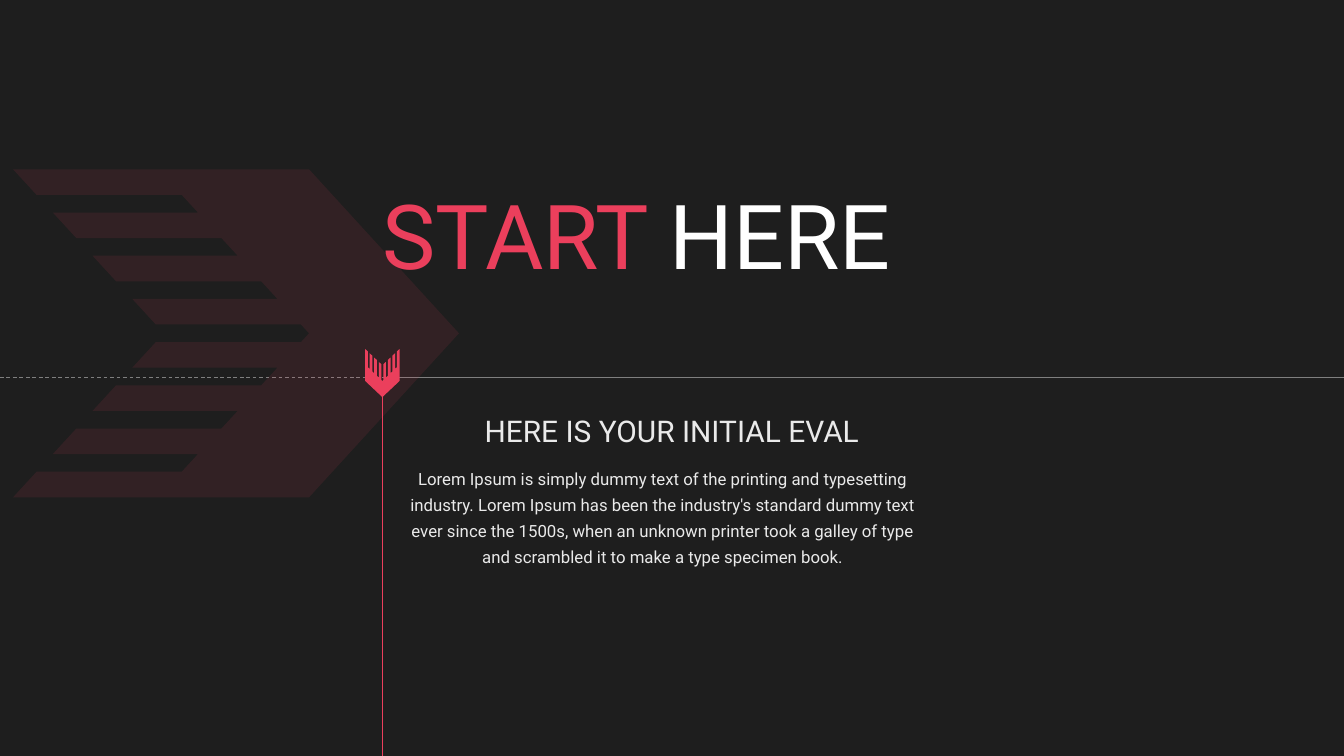
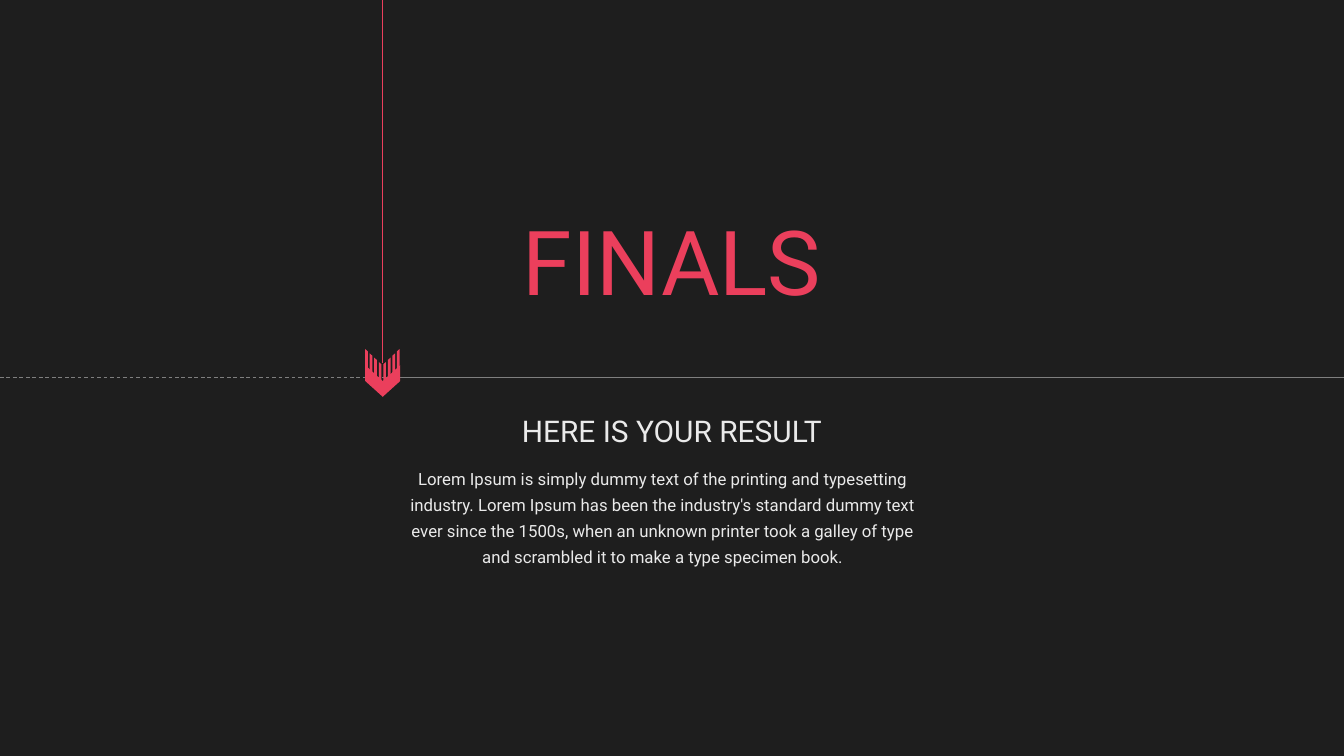
"""Build two dark section slides with arrow markers on a crossing axis."""
from dataclasses import dataclass

from pptx import Presentation
from pptx.dml.color import RGBColor
from pptx.enum.dml import MSO_LINE
from pptx.enum.shapes import MSO_CONNECTOR, MSO_SHAPE
from pptx.enum.text import MSO_ANCHOR, MSO_AUTO_SIZE, PP_ALIGN
from pptx.oxml.ns import qn
from pptx.util import Inches, Pt
from lxml import etree

STRAIGHT, CHEVRON, DASH = MSO_CONNECTOR.STRAIGHT, MSO_SHAPE.CHEVRON, MSO_LINE.DASH
TOP, MIDDLE, BOTTOM = MSO_ANCHOR.TOP, MSO_ANCHOR.MIDDLE, MSO_ANCHOR.BOTTOM
LEFT, CENTER = PP_ALIGN.LEFT, PP_ALIGN.CENTER
NO_FIT = MSO_AUTO_SIZE.NONE

COLORS = {"bg": "1E1E1E", "accent": "EB3F5C", "axis": "7F7F7F",
          "text": "EAEAEA", "white": "FFFFFF"}
FONT = "Roboto"
SLIDE_W, SLIDE_H = 20, 11.25
AXIS_X, AXIS_Y = 5.69, 5.62

HALF, BAR, BAR_COUNT = 2.44, 0.38, 8
PITCH = (2 * HALF - BAR) / (BAR_COUNT - 1)
SHOULDER, TAIL, SLOPE = 2.23, 4.39, 0.92
BARS = [(-HALF + i * PITCH, -HALF + i * PITCH + BAR) for i in range(BAR_COUNT)]

BODY = ("Lorem Ipsum is simply dummy text of the printing and typesetting "
        "industry. Lorem Ipsum has been the industry's standard dummy text "
        "ever since the 1500s, when an unknown printer took a galley of type "
        "and scrambled it to make a type specimen book.")


@dataclass
class TextStyle:
    """Size, alignment, anchor and line spacing of a text block."""
    size: float
    align: PP_ALIGN
    anchor: MSO_ANCHOR
    spacing: float = 1.0


@dataclass
class Arrow:
    """Place and scale of a feathered arrow, measured from its tip."""
    tip_x: float
    tip_y: float
    across: float
    along: float
    down: bool

    def place(self, a: float, d: float) -> tuple:
        """Turn an offset across the shaft and a distance from the tip into EMU."""
        a, d = a * self.across, d * self.along
        x, y = (a, -d) if self.down else (-d, a)
        return Inches(self.tip_x + x), Inches(self.tip_y + y)


@dataclass
class Section:
    """Title runs, title box, title style and heading of a slide."""
    runs: list
    box: tuple
    style: TextStyle
    heading: str
    line_y: tuple


HEADING_STYLE = TextStyle(32, CENTER, BOTTOM)
BODY_STYLE = TextStyle(18, CENTER, TOP, 1.3)
BIG_ARROW = Arrow(6.83, 4.96, 1, 1, False)
MARKER = Arrow(AXIS_X, 5.91, 0.105, 0.108, True)
START = Section([("START ", "accent"), ("HERE", "white")], (5.59, 1.27, 10.94, 3.05),
                TextStyle(96, LEFT, BOTTOM, 0.8), "HERE IS YOUR INITIAL EVAL",
                (SLIDE_H, 5.87))
FINALS = Section([("FINALS", "accent")], (4.89, 2.46, 10.22, 3.11),
                 TextStyle(96, CENTER, MIDDLE, 0.8), "HERE IS YOUR RESULT", (5.4, 0))


def rgb(name: str) -> RGBColor:
    """Look up a named colour."""
    return RGBColor.from_string(COLORS[name])


def apply(target: object, values: dict) -> None:
    """Set each named attribute on the target."""
    for name, value in values.items():
        setattr(target, name, value)


def write(shape, box: tuple, runs: list, style: TextStyle) -> None:
    """Move a text shape to its box and fill it with coloured runs."""
    apply(shape, dict(zip(("left", "top", "width", "height"), map(Inches, box))))
    tf = shape.text_frame
    apply(tf, {"word_wrap": True, "auto_size": NO_FIT, "vertical_anchor": style.anchor})
    p = tf.paragraphs[0]
    apply(p, {"alignment": style.align, "line_spacing": style.spacing,
              "space_before": Pt(0)})
    for text, color in runs:
        r = p.add_run()
        r.text = text
        apply(r.font, {"name": FONT, "size": Pt(style.size), "bold": False})
        r.font.color.rgb = rgb(color)


def add_line(s, start: tuple, end: tuple, color: str, dash: MSO_LINE = None) -> None:
    """Draw a one-point straight line."""
    line = s.shapes.add_connector(STRAIGHT, *map(Inches, start + end))
    apply(line.line, {"width": Pt(1), "dash_style": dash})
    line.line.color.rgb = rgb(color)
    etree.SubElement(line._element.spPr, qn("a:effectLst"))


def paint(shape, alpha: int = 100) -> None:
    """Fill a shape with the accent colour at a percentage of opacity."""
    shape.shadow.inherit = False
    shape.line.fill.background()
    shape.fill.solid()
    shape.fill.fore_color.rgb = rgb("accent")
    if alpha < 100:
        color = shape._element.spPr.find(qn("a:solidFill"))[0]
        etree.SubElement(color, qn("a:alpha"), val=str(alpha * 1000))


def add_outline(shapes, arrow: Arrow, points: list, alpha: int = 100) -> None:
    """Draw a closed outline given in arrow measures."""
    placed = [arrow.place(a, d) for a, d in points]
    builder = shapes.build_freeform(*placed[0])
    builder.add_line_segments(placed[1:], close=True)
    paint(builder.convert_to_shape(), alpha)


def tail(a: float) -> float:
    """Give the distance from the tip to the end of a feather."""
    return TAIL + SLOPE * abs(a)


def notch(a: float) -> float:
    """Give the distance from the tip to the bottom of a gap."""
    return SHOULDER + SLOPE * abs(a)


def add_feathered_arrow(s, arrow: Arrow, alpha: int = 100) -> None:
    """Draw the whole arrow as a single outline."""
    points = []
    for lo, hi in BARS:
        points += [(lo, notch(lo)), (lo, tail(lo)), (hi, tail(hi)), (hi, notch(hi))]
    points.insert(len(points) // 2, (0, SHOULDER))
    head = [(HALF, SHOULDER), (0, 0), (-HALF, SHOULDER)]
    add_outline(s.shapes, arrow, points[1:-1] + head, alpha)


def add_split_arrow(s, arrow: Arrow) -> None:
    """Draw the arrow as a group of separate feathers and a chevron."""
    shapes = s.shapes.add_group_shape().shapes
    for lo, hi in BARS:
        add_outline(shapes, arrow, [(lo, SHOULDER), (lo, tail(lo)),
                                    (hi, tail(hi)), (hi, SHOULDER)])
    chevron = shapes.add_shape(CHEVRON, *map(Inches, (5.46, 5.41, 0.47, 0.52)))
    chevron.rotation = 90
    paint(chevron)


def add_section(prs, section: Section):
    """Add a slide with its texts and crossing lines."""
    s = prs.slides.add_slide(prs.slide_layouts[2])
    write(s.shapes.title, section.box, section.runs, section.style)
    write(s.placeholders[1], (6, 6.83, 7.72, 3.07), [(BODY, "text")], BODY_STYLE)
    box = (6.31, 6.08, 7.38, 0.64)
    heading = s.shapes.add_textbox(*map(Inches, box))
    write(heading, box, [(section.heading, "text")], HEADING_STYLE)
    start_y, end_y = section.line_y
    add_line(s, (AXIS_X, start_y), (AXIS_X, end_y), "accent")
    add_line(s, (SLIDE_W, AXIS_Y), (AXIS_X, AXIS_Y), "axis")
    add_line(s, (0, AXIS_Y), (AXIS_X, AXIS_Y), "axis", DASH)
    return s


def main() -> None:
    """Build and save the presentation."""
    prs = Presentation()
    apply(prs, {"slide_width": Inches(SLIDE_W), "slide_height": Inches(SLIDE_H)})
    fill = prs.slide_master.background.fill
    fill.solid()
    fill.fore_color.rgb = rgb("bg")

    s = add_section(prs, START)
    add_feathered_arrow(s, BIG_ARROW, alpha=10)
    add_feathered_arrow(s, MARKER)

    s = add_section(prs, FINALS)
    add_split_arrow(s, MARKER)
    prs.save("out.pptx")


if __name__ == "__main__":
    main()
